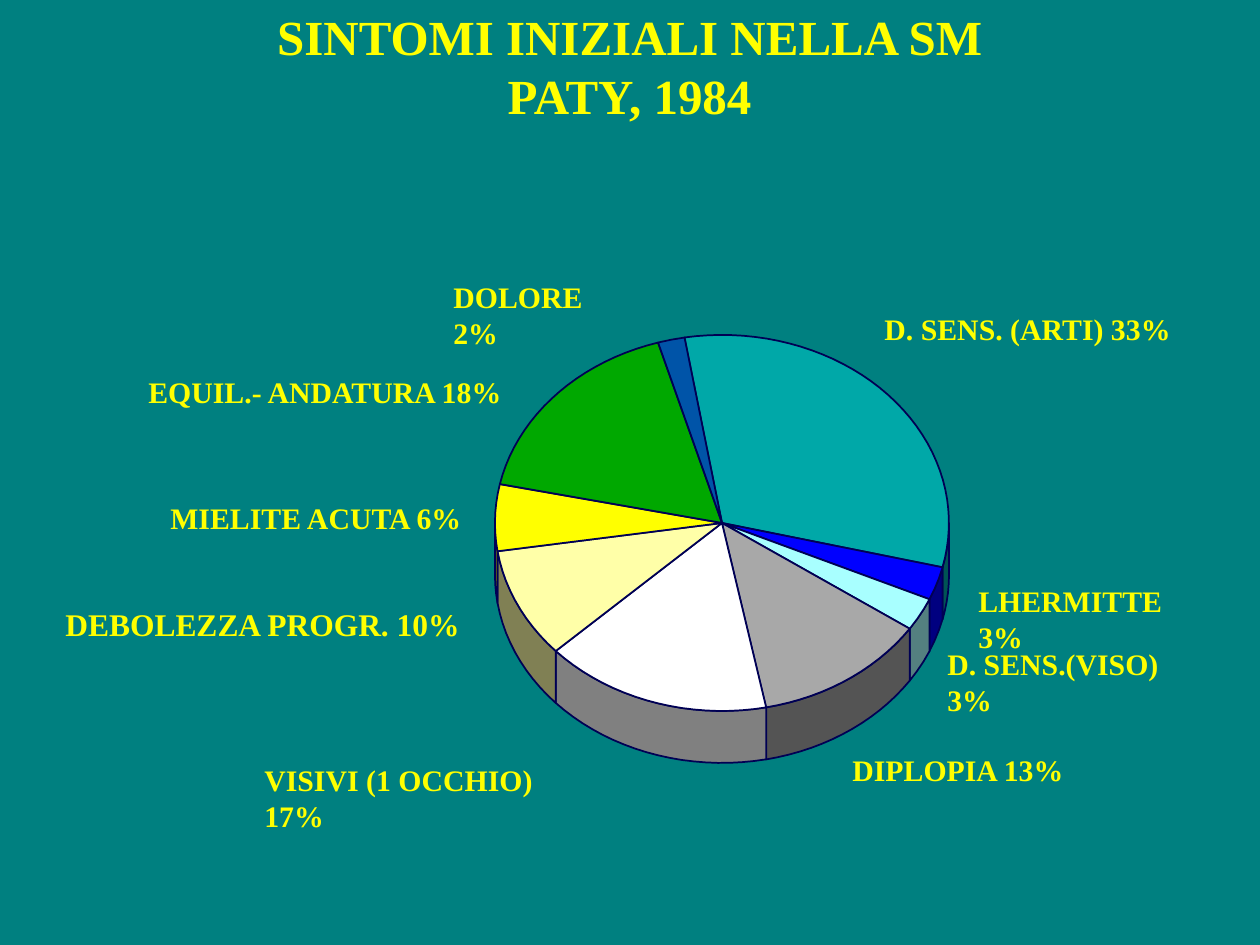
from dataclasses import dataclass
from math import cos, radians, sin

from pptx import Presentation
from pptx.dml.color import RGBColor
from pptx.enum.text import MSO_ANCHOR, MSO_AUTO_SIZE, PP_ALIGN
from pptx.util import Pt

SCALE = 914400 / 126
WIDE, HIGH = 1260, 945
TOP = MSO_ANCHOR.TOP
FIXED = MSO_AUTO_SIZE.NONE
LEFT, CENTER = PP_ALIGN.LEFT, PP_ALIGN.CENTER


@dataclass(frozen=True)
class Theme:
    font: str = "Times New Roman"
    back: str = "008080"
    text: str = "FFFF00"
    edge: str = "000054"
    title: int = 28
    label: int = 17
    large: int = 18


THEME = Theme()
TITLE = "SINTOMI INIZIALI NELLA SM\vPATY, 1984"
START = -9.5  # degrees clockwise from the top

# Share and colour of each slice, clockwise
SLICES = [
    (33, "00A8A8"),  # D. SENS. (ARTI)
    (3, "0000FF"),   # LHERMITTE
    (3, "A8FFFF"),   # D. SENS.(VISO)
    (13, "A8A8A8"),  # DIPLOPIA
    (17, "FFFFFF"),  # VISIVI
    (10, "FFFFA8"),  # DEBOLEZZA
    (6, "FFFF00"),   # MIELITE
    (18, "00A800"),  # EQUIL.
    (2, "0054A8"),   # DOLORE
]

# Text, left, top, width and type size of each label
LABELS = [
    ("D. SENS. (ARTI) 33%", 872, 305, 320, THEME.label),
    ("LHERMITTE 3%", 966, 577, 255, THEME.label),
    ("D. SENS.(VISO) 3%", 935, 640, 280, THEME.label),
    ("DIPLOPIA 13%", 840, 746, 246, THEME.label),
    ("VISIVI (1 OCCHIO) 17%", 252, 756, 352, THEME.label),
    ("DEBOLEZZA PROGR. 10%", 53, 599, 430, THEME.large),
    ("MIELITE ACUTA 6%", 158, 494, 337, THEME.label),
    ("EQUIL.- ANDATURA 18%", 136, 368, 391, THEME.label),
    ("DOLORE 2%", 441, 273, 200, THEME.label),
]


def px(num):
    return round(num * SCALE)


def color(code):
    return RGBColor.from_string(code)


def shade(code):
    """Half the brightness, for the side of a slice."""
    return "".join(f"{(part + 1) // 2:02X}" for part in color(code))


def write(frame, text, size, align):
    frame.word_wrap = True
    frame.auto_size = FIXED
    frame.vertical_anchor = TOP
    frame.text = text
    for para in frame.paragraphs:
        para.alignment = align
        for run in para.runs:
            font = run.font
            font.name, font.size, font.bold = THEME.font, Pt(size), True
            font.color.rgb = color(THEME.text)


def add_title(slide, box):
    title = slide.shapes.title
    title.left, title.top, title.width, title.height = map(px, box)
    write(title.text_frame, TITLE, THEME.title, CENTER)


def add_face(slide, points, fill):
    spots = [(px(x), px(y)) for x, y in points]
    pen = slide.shapes.build_freeform(*spots[0], scale=1.0)
    pen.add_line_segments(spots[1:], close=True)
    face = pen.convert_to_shape()
    face.shadow.inherit = False
    face.fill.solid()
    face.fill.fore_color.rgb = color(fill)
    face.line.color.rgb = color(THEME.edge)
    face.line.width = Pt(1)


def add_pie(slide, box, depth):
    """Tilted pie: box holds the top ellipse, depth is the rim below it."""
    left, top, width, height = box
    mid_x, mid_y = left + width / 2, top + height / 2

    def arc(first, last):
        steps = max(2, round((last - first) / 3))
        turns = [radians(first + (last - first) * i / steps)
                 for i in range(steps + 1)]
        return [(mid_x + width / 2 * sin(t), mid_y - height / 2 * cos(t))
                for t in turns]

    total = sum(share for share, _ in SLICES)
    first = START
    for share, fill in SLICES:
        last = first + 360 * share / total
        # Only the front half of the rim shows
        near, far = max(first, 90), min(last, 270)
        if near < far:
            rim = arc(near, far)
            base = [(x, y + depth) for x, y in reversed(rim)]
            add_face(slide, rim + base, shade(fill))
        add_face(slide, arc(first, last) + [(mid_x, mid_y)], fill)
        first = last


def add_labels(slide, box):
    left, top = box[:2]
    for text, x, y, width, size in LABELS:
        label = slide.shapes.add_textbox(
            px(left + x), px(top + y), px(width), px(48))
        write(label.text_frame, text, size, LEFT)


def main():
    deck = Presentation()
    deck.slide_width, deck.slide_height = px(WIDE), px(HIGH)
    slide = deck.slides.add_slide(deck.slide_layouts[5])
    back = slide.background.fill
    back.solid()
    back.fore_color.rgb = color(THEME.back)
    add_pie(slide, (495, 335, 454, 376), 52)
    add_labels(slide, (0, 0, WIDE, HIGH))
    add_title(slide, (262, 0, 735, 130))
    deck.save("out.pptx")


if __name__ == "__main__":
    main()
